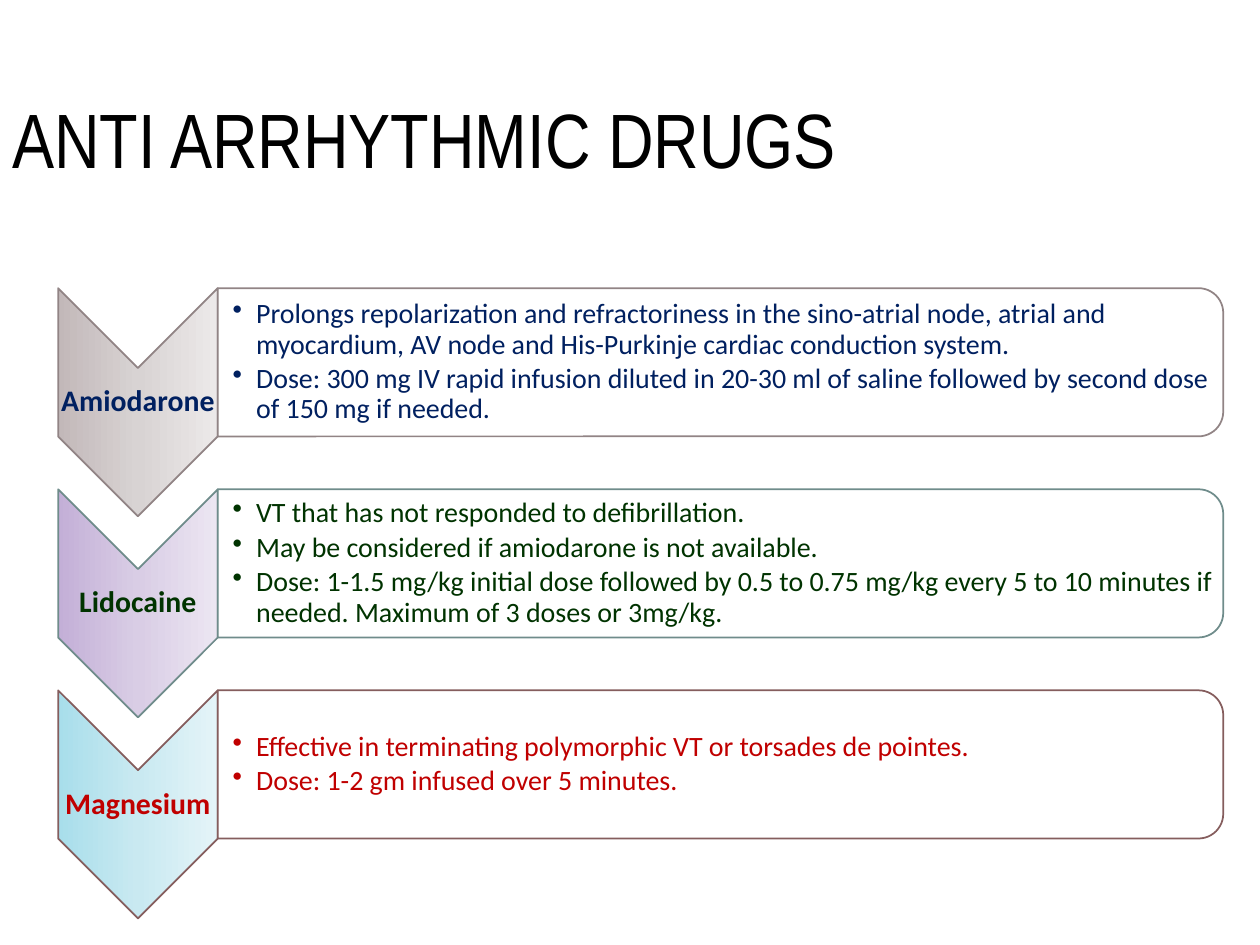
import dataclasses

import lxml.etree
import pptx
import pptx.dml.color
import pptx.enum.shapes
import pptx.enum.text
import pptx.oxml
import pptx.oxml.ns
import pptx.util

Pt = pptx.util.Pt
SHAPE = pptx.enum.shapes.MSO_SHAPE
ALIGN = pptx.enum.text.PP_ALIGN
ANCHOR = pptx.enum.text.MSO_ANCHOR
qn = pptx.oxml.ns.qn


@dataclasses.dataclass(frozen=True)
class Theme:
    title_font: str = "Arial Narrow"
    body_font: str = "Calibri"
    title_size: float = 44
    label_size: float = 17
    bullet_size: float = 16
    title_color: str = "000000"
    panel_fill: str = "FFFFFF"
    drug_text: tuple = ("002060", "003300", "C00000")
    outlines: tuple = ("918485", "6F8C8B", "855D5D")
    gradients: tuple = (
        ("C2B8B9", "D8D3D3", "ECE9E9"),
        ("C3AFD7", "D9CDE5", "ECE6F2"),
        ("A8DEEB", "C9E9F1", "E4F4F8"),
    )


def rgb(color):
    return pptx.dml.color.RGBColor.from_string(color)


class SlideBuilder:
    def __init__(self, slide, theme):
        self.slide = slide
        self.theme = theme

    def text(self, box, lines, font, size, color, bold=False, align=ALIGN.LEFT,
             insets=(7.2, 3.6, 7.2, 3.6), space_after=0, bullet_indent=0):
        frame = self.slide.shapes.add_textbox(*map(Pt, box)).text_frame
        frame.word_wrap = True
        frame.vertical_anchor = ANCHOR.MIDDLE
        (frame.margin_left, frame.margin_top,
         frame.margin_right, frame.margin_bottom) = map(Pt, insets)
        frame.text = "\n".join(lines)
        for paragraph in frame.paragraphs:
            if bullet_indent:
                self.bullet(paragraph, bullet_indent)
            paragraph.alignment = align
            paragraph.line_spacing = 0.9
            paragraph.space_after = Pt(space_after)
            for run in paragraph.runs:
                run.font.name = font
                run.font.size = Pt(size)
                run.font.bold = bold
                run.font.color.rgb = rgb(color)

    def bullet(self, paragraph, indent):
        paragraph.level = 1
        properties = paragraph._p.get_or_add_pPr()
        properties.set("marL", str(Pt(indent)))
        properties.set("indent", str(-Pt(indent)))
        lxml.etree.SubElement(properties, qn("a:buChar")).set("char", "•")

    def turned_shape(self, kind, left, top, width, height, outline):
        shape = self.slide.shapes.add_shape(
            kind, Pt(left + (width - height) / 2), Pt(top + (height - width) / 2),
            Pt(height), Pt(width))
        shape.rotation = 90
        shape.shadow.inherit = False
        shape.line.color.rgb = rgb(outline)
        shape.line.width = Pt(1)
        return shape

    def chevron(self, box, outline, colors):
        shape = self.turned_shape(SHAPE.CHEVRON, *box, outline)
        shape.fill.gradient()
        gradient = shape._element.spPr.find(qn("a:gradFill"))
        stops = gradient.find(qn("a:gsLst"))
        for stop in list(stops):
            stops.remove(stop)
        for position, color in zip((0, 50000, 100000), colors):
            stop = lxml.etree.SubElement(stops, qn("a:gs"), pos=str(position))
            lxml.etree.SubElement(stop, qn("a:srgbClr"), val=color)
        gradient.find(qn("a:lin")).set("ang", "16200000")

    def panel(self, box, outline):
        shape = self.turned_shape(SHAPE.ROUND_2_SAME_RECTANGLE, *box, outline)
        shape.fill.solid()
        shape.fill.fore_color.rgb = rgb(self.theme.panel_fill)
        color = shape._element.spPr.find(qn("a:solidFill"))[0]
        lxml.etree.SubElement(color, qn("a:alpha"), val="90000")

    def title(self, box, wording):
        theme = self.theme
        self.text(box, [wording], theme.title_font, theme.title_size, theme.title_color)

    def label(self, box, wording, color):
        theme = self.theme
        self.text(box, [wording], theme.body_font, theme.label_size, color,
                  bold=True, align=ALIGN.CENTER, insets=(0.7,) * 4)

    def bullets(self, box, lines, color):
        theme = self.theme
        self.text(box, lines, theme.body_font, theme.bullet_size, color,
                  insets=(8.5, 0.7, 0.7, 0.7), space_after=2.4, bullet_indent=13.5)


DRUGS = (
    ("Amiodarone", (
        "Prolongs repolarization and refractoriness in the sino-atrial node, atrial and "
        "myocardium, AV node and His-Purkinje cardiac conduction system.",
        "Dose: 300 mg IV rapid infusion diluted in 20-30 ml of saline followed by second "
        "dose of 150 mg if needed.",
    )),
    ("Lidocaine", (
        "VT that has not responded to defibrillation.",
        "May be considered if amiodarone is not available.",
        "Dose: 1-1.5 mg/kg initial dose followed by 0.5 to 0.75 mg/kg every 5 to 10 "
        "minutes if needed. Maximum of 3 doses or 3mg/kg.",
    )),
    ("Magnesium", (
        "Effective in terminating polymorphic VT or torsades de pointes.",
        "Dose: 1-2 gm infused over 5 minutes.",
    )),
)


def main():
    deck = pptx.Presentation()
    deck.slide_width, deck.slide_height = Pt(720), Pt(540)
    theme = Theme()
    builder = SlideBuilder(deck.slides.add_slide(deck.slide_layouts[6]), theme)
    builder.title((0, 36.5, 720, 91), "ANTI ARRHYTHMIC DRUGS")

    left, first_top, pitch = 33.2, 164.7, 114.9
    chevron_width, chevron_height = 91.2, 130.3
    panel_left, panel_width, panel_height = left + chevron_width, 574.6, 84.7
    styles = zip(theme.drug_text, theme.outlines, theme.gradients)
    for row, ((drug, facts), (color, outline, colors)) in enumerate(zip(DRUGS, styles)):
        top = first_top + row * pitch
        builder.chevron((left, top, chevron_width, chevron_height), outline, colors)
        builder.label((left, top + chevron_width / 2, chevron_width,
                       chevron_height - chevron_width), drug, color)
        builder.panel((panel_left, top, panel_width, panel_height), outline)
        builder.bullets((panel_left, top + 4.1, panel_width - 4.1, panel_height - 8.2),
                        facts, color)

    deck.save("out.pptx")


if __name__ == "__main__":
    main()
